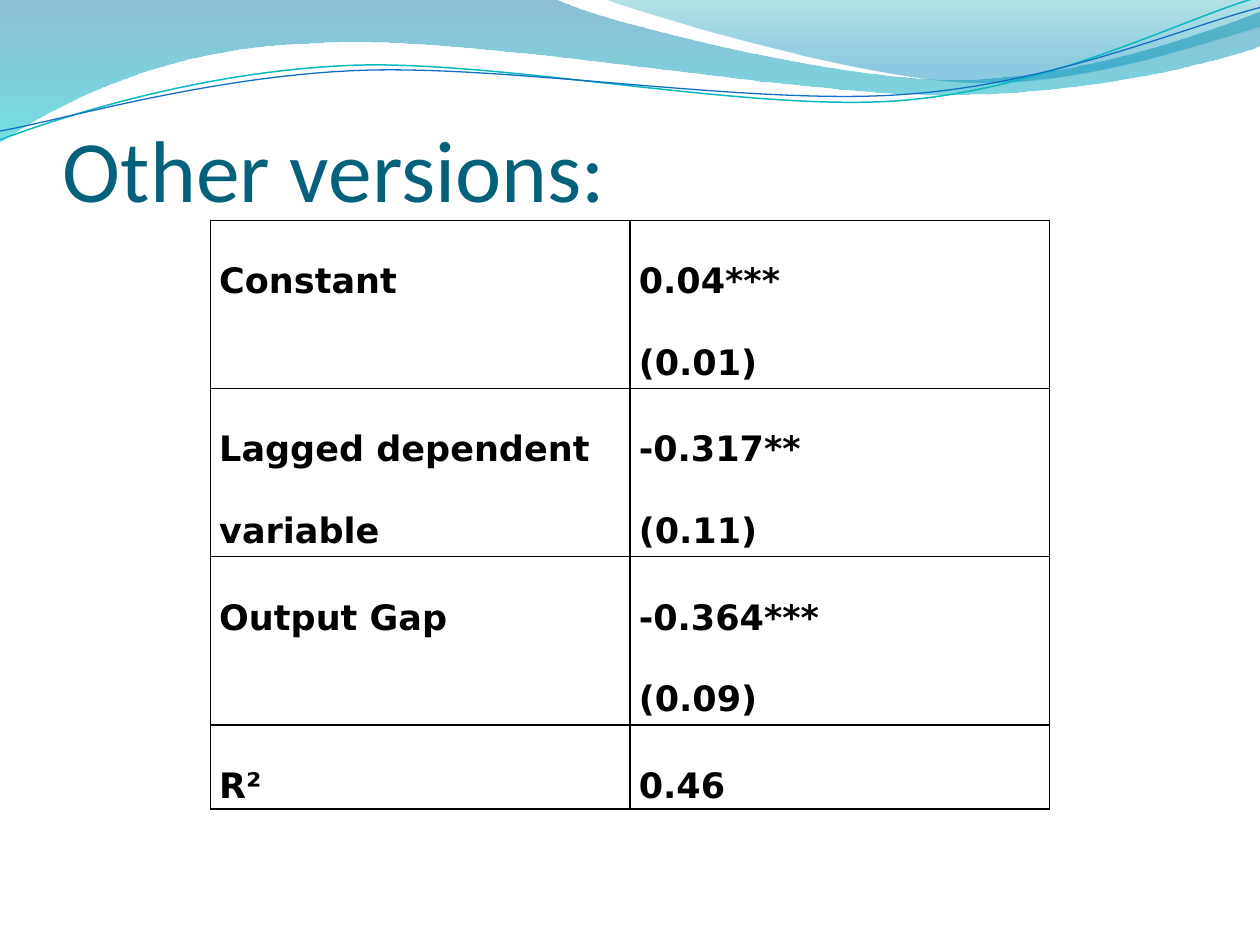
from lxml.etree import SubElement
from pptx import Presentation
from pptx.dml.color import RGBColor
from pptx.enum.text import MSO_ANCHOR
from pptx.oxml import parse_xml
from pptx.oxml.ns import nsdecls, qn
from pptx.util import Inches, Pt

COLORS = {
    "title": "04617B",
    "ink": "000000",
    "band_top": "0074A1",
    "band_bottom": "00C6CF",
    "crest_top": "00A1A9",
    "crest_bottom": "008BBF",
    "teal_line": "0AB8BF",
    "blue_line": "0F6FC6",
}

BAND = [
    (0, 0), (4.4, -0.01), (4.76, 0.17, 6.64, 0.63, 7.58, 0.63),
    (8.53, 0.63, 9.58, 0.26, 10, 0.09), (10.01, 0.36),
    (9.83, 0.44, 8.7, 0.76, 7.46, 0.75), (6.22, 0.75, 3.82, 0.28, 2.57, 0.34),
    (1.29, 0.36, 0.46, 0.83, -0.01, 1.13), (0, 0),
]
CREST = [
    (4.79, -0.01), (5.09, 0.11, 6.82, 0.62, 7.69, 0.65),
    (8.56, 0.69, 9.61, 0.32, 10, 0.21), (10, 0), (4.79, -0.01),
]
TEAL_WAVE = [
    (0, 1.11), (0.48, 0.93, 1.58, 0.57, 2.77, 0.52),
    (3.95, 0.47, 5.93, 0.89, 7.13, 0.8), (8.33, 0.71, 9.38, 0.15, 9.98, -0.02),
]
BLUE_WAVE = [
    (0, 1.04), (0.47, 0.96, 1.64, 0.61, 2.83, 0.56),
    (4.03, 0.51, 5.97, 0.84, 7.17, 0.75), (8.36, 0.67, 9.41, 0.21, 10, 0.06),
]
ESTIMATES = [
    ("Constant", "0.04***\n(0.01)"),
    ("Lagged dependent variable", "-0.317**\n(0.11)"),
    ("Output Gap", "-0.364***\n(0.09)"),
    ("R²", "0.46"),
]


class SlideBuilder:
    title_font = "Calibri"
    table_font = "DejaVu Sans"

    def __init__(self, slide):
        self.slide = slide

    def color(self, name):
        return RGBColor.from_string(COLORS[name])

    def style(self, paragraph, font_name, size, color, bold=False):
        for run in paragraph.runs:
            run.font.name = font_name
            run.font.size = Pt(size)
            run.font.bold = bold
            run.font.color.rgb = self.color(color)

    def outline(self, segments, close):
        start, *anchors = [
            (Inches(segment[-2]), Inches(segment[-1])) for segment in segments]
        builder = self.slide.shapes.build_freeform(*start)
        builder.add_line_segments(anchors, close=close)
        shape = builder.convert_to_shape()
        shape.shadow.inherit = False
        self.bend(shape, segments[1:])
        return shape

    def bend(self, shape, segments):
        lines = list(shape.element.iter(qn("a:lnTo")))
        for line, segment in zip(lines, segments):
            if len(segment) == 2:
                continue
            line.tag = qn("a:cubicBezTo")
            for index in (0, 1):
                x, y = segment[2 * index:2 * index + 2]
                control = SubElement(
                    line, qn("a:pt"),
                    x=str(Inches(x) - shape.left), y=str(Inches(y) - shape.top))
                line.insert(index, control)

    def gradient_band(self, segments, stops):
        band = self.outline(segments, True)
        band.line.fill.background()
        band.fill.gradient()
        band.fill.gradient_angle = 270
        for stop, (position, color, _) in zip(band.fill.gradient_stops, stops):
            stop.position = position
            stop.color.rgb = self.color(color)
        for tint, (_, _, opacity) in zip(band.element.spPr.iter(qn("a:srgbClr")), stops):
            SubElement(tint, qn("a:alpha"), val=str(opacity * 1000))

    def wave(self, segments, color, width):
        wave = self.outline(segments, False)
        wave.fill.background()
        wave.line.color.rgb = self.color(color)
        wave.line.width = Pt(width)

    def title(self, text, left, top, width, height):
        frame = self.slide.shapes.add_textbox(
            Inches(left), Inches(top), Inches(width), Inches(height)).text_frame
        frame.word_wrap = True
        frame.vertical_anchor = MSO_ANCHOR.BOTTOM
        frame.margin_left = frame.margin_right = frame.margin_bottom = 0
        frame.text = text
        self.style(frame.paragraphs[0], self.title_font, 50, "title")

    def borders(self, cell):
        properties = cell._tc.get_or_add_tcPr()
        for index, side in enumerate(("lnL", "lnR", "lnT", "lnB")):
            properties.insert(index, parse_xml(
                f'<a:{side} {nsdecls("a")} w="{Pt(1)}"><a:solidFill>'
                f'<a:srgbClr val="{COLORS["ink"]}"/></a:solidFill></a:{side}>'))

    def cell(self, cell, text):
        cell.fill.background()
        self.borders(cell)
        cell.margin_left = cell.margin_right = Inches(0.07)
        cell.margin_top = cell.margin_bottom = 0
        cell.text_frame.text = text
        for paragraph in cell.text_frame.paragraphs:
            paragraph.line_spacing = 2.0
            self.style(paragraph, self.table_font, 20, "ink", bold=True)

    def table(self, rows, left, top, column_width, line_height):
        heights = [line_height * (1 + values.count("\n")) for _, values in rows]
        table = self.slide.shapes.add_table(
            len(rows), 2, Inches(left), Inches(top),
            Inches(2 * column_width), Inches(sum(heights))).table
        table.first_row = table.horz_banding = False
        for column in table.columns:
            column.width = Inches(column_width)
        for row, height, texts in zip(table.rows, heights, rows):
            row.height = Inches(height)
            for cell, text in zip(row.cells, texts):
                self.cell(cell, text)


def main():
    presentation = Presentation()
    presentation.slide_width = Inches(10)
    presentation.slide_height = Inches(7.5)
    builder = SlideBuilder(presentation.slides.add_slide(presentation.slide_layouts[6]))
    builder.gradient_band(BAND, [(0, "band_top", 45), (1, "band_bottom", 55)])
    builder.gradient_band(CREST, [(0, "crest_top", 30), (0.8, "crest_bottom", 45)])
    builder.wave(TEAL_WAVE, "teal_line", 0.85)
    builder.wave(BLUE_WAVE, "blue_line", 0.75)
    builder.title("Other versions:", 0.5, 0.5, 9, 1.25)
    builder.table(ESTIMATES, 1.67, 1.75, 3.33, 0.65)
    presentation.save("out.pptx")


if __name__ == "__main__":
    main()
